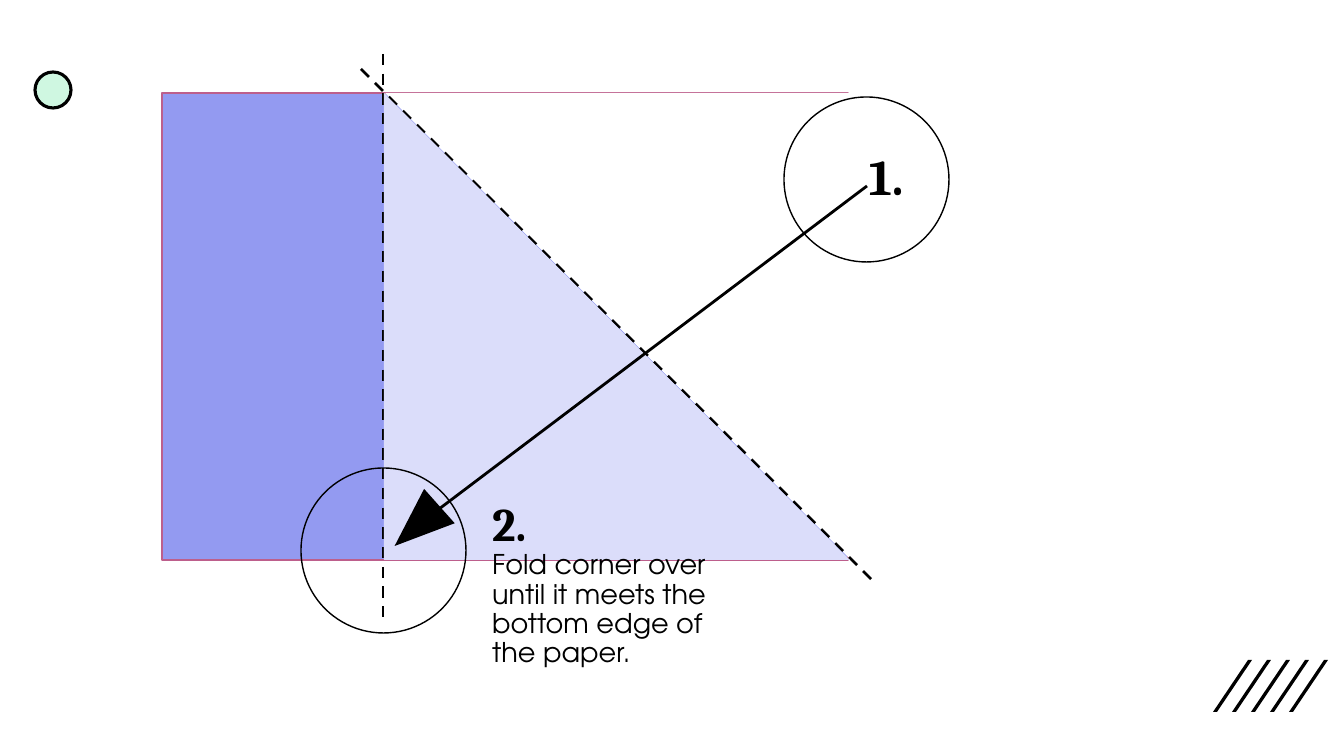
import pptx
import pptx.util
import pptx.dml.color
import pptx.enum.dml
import pptx.enum.shapes
import pptx.enum.text
import pptx.oxml
import pptx.oxml.ns

Pt = pptx.util.Pt
RGB = pptx.dml.color.RGBColor
SHAPE = pptx.enum.shapes.MSO_SHAPE

BLACK = RGB(0x00, 0x00, 0x00)
WHITE = RGB(0xFF, 0xFF, 0xFF)
MINT = RGB(0xCF, 0xF7, 0xE1)
PAPER = RGB(0x93, 0x9A, 0xF1)
FOLDED = RGB(0xDB, 0xDD, 0xFA)
EDGE = RGB(0xBD, 0x5F, 0x8C)

PX = 914400 / 100.8


def emu(*lengths):
    return [round(n * PX) for n in lengths]


def paint(sp, fill, line, width):
    """Give a shape its fill and outline, either of which may be None."""
    sp.shadow.inherit = False
    if fill is None:
        sp.fill.background()
    else:
        sp.fill.solid()
        sp.fill.fore_color.rgb = fill
    if line is None:
        sp.line.fill.background()
    else:
        sp.line.color.rgb = line
        sp.line.width = Pt(width)


prs = pptx.Presentation()
prs.slide_width, prs.slide_height = emu(1344, 756)
s = prs.slides.add_slide(prs.slide_layouts[2])
s.shapes.title.element.getparent().remove(s.shapes.title.element)
body = s.placeholders[1]

# Slanted strokes in the corner
for i in range(5):
    x = 1213 + 19 * i
    fb = s.shapes.build_freeform(x + 4, 712, scale=PX)
    fb.add_line_segments([(x, 712), (x + 35, 660), (x + 39, 660)])
    paint(fb.convert_to_shape(), BLACK, None, 0)

# Shapes and lines from back to front; kind None is a line from (x, y) to (x2, y2)
drawing = [
    (SHAPE.OVAL, (35, 72, 36, 36), 0, MINT, BLACK, 2.25),
    (SHAPE.RECTANGLE, (162, 93, 686, 467), 0, PAPER, EDGE, 1),
    (None, (383, 54, 383, 621), "dash"),
    (SHAPE.RIGHT_TRIANGLE, (385, 93, 466, 467), 180, WHITE, None, 0),
    (None, (361, 69, 875, 583), "dash"),
    (SHAPE.RIGHT_TRIANGLE, (384, 93, 466, 467), 0, FOLDED, None, 0),
    (SHAPE.OVAL, (301, 468, 165, 165), 0, None, BLACK, 1),
    (None, (402, 537, 867, 186), "arrow"),
    (SHAPE.ISOSCELES_TRIANGLE, (394, 496, 46, 60), 228.3, BLACK, None, 0),
    (SHAPE.OVAL, (784, 97, 165, 165), 0, None, BLACK, 1),
]
for kind, box, *style in drawing:
    if kind is not None:
        rotation, fill, line, width = style
        sp = s.shapes.add_shape(kind, *emu(*box))
        sp.rotation = rotation
        paint(sp, fill, line, width)
        continue
    cx = s.shapes.add_connector(pptx.enum.shapes.MSO_CONNECTOR.STRAIGHT, *emu(*box))
    cx.line.color.rgb = BLACK
    cx.line.width = Pt(2)
    if style == ["dash"]:
        cx.line.dash_style = pptx.enum.dml.MSO_LINE.DASH
    else:
        head = pptx.oxml.parse_xml(
            f'<a:headEnd {pptx.oxml.ns.nsdecls("a")} type="stealth"/>')
        cx.line._get_or_add_ln().append(head)
    cx._element.spPr.append(
        pptx.oxml.parse_xml(f'<a:effectLst {pptx.oxml.ns.nsdecls("a")}/>'))

# Step labels
s.shapes._spTree.append(body.element)
label = s.shapes.add_textbox(0, 0, 0, 0)
number = {"name": "Cambria", "bold": True}
steps = [
    (body, (482, 496, 245, 203), [
        ("2.", {**number, "size": Pt(33.3)}),
        ("Fold corner over until it meets the bottom edge of the paper.",
         {"name": "TeX Gyre Adventor", "bold": False, "size": Pt(19.4)})]),
    (label, (859, 140, 198, 72), [("1.", {**number, "size": Pt(36)})]),
]
for sp, box, runs in steps:
    sp.left, sp.top, sp.width, sp.height = emu(*box)
    tf = sp.text_frame
    tf.word_wrap = True
    tf.auto_size = pptx.enum.text.MSO_AUTO_SIZE.NONE
    tf.vertical_anchor = pptx.enum.text.MSO_ANCHOR.TOP
    p = tf.paragraphs[0]
    p.space_before = Pt(0)
    p.line_spacing = 0.9 if sp is body else 1.0
    for i, (text, font) in enumerate(runs):
        if i:
            p.add_line_break()
        r = p.add_run()
        r.text = text
        r.font.color.rgb = BLACK
        for name, value in font.items():
            setattr(r.font, name, value)

prs.save("out.pptx")
